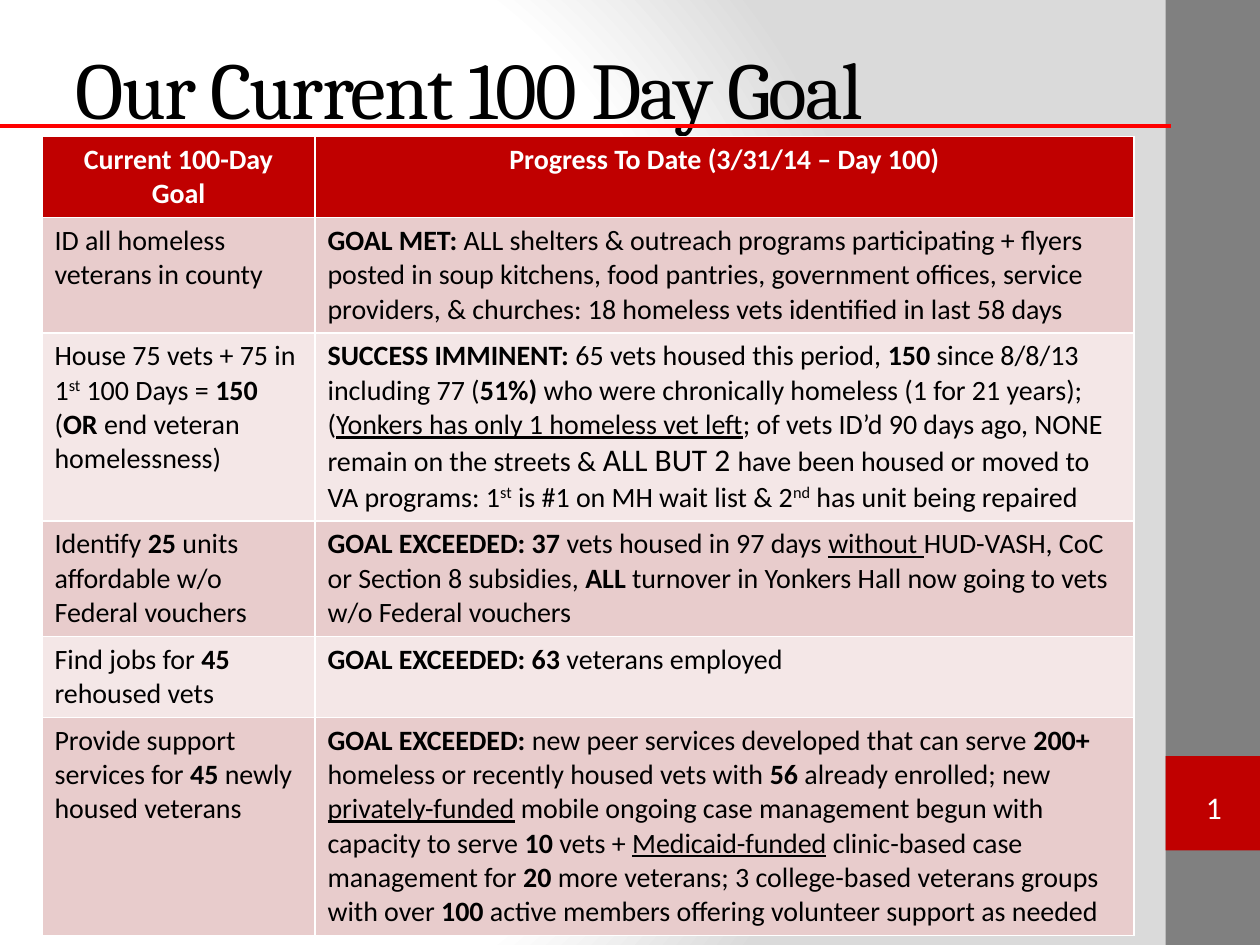
"""Build the 100 day goal slide: a title, a progress table and a side bar."""
import pptx
import pptx.dml.color
import pptx.enum.shapes
import pptx.enum.text
import pptx.oxml
import pptx.oxml.ns
import pptx.util

COLORS = {"red": "C00000", "line": "FF0000", "gray": "808080", "white": "FFFFFF",
          "black": "000000", "edge": "DADADA", "band": "E8CCCC", "pale": "F4E7E7"}

HEADER = ("Current 100-Day Goal", "Progress To Date (3/31/14 – Day 100)")

GOALS = [
    (3, "ID all homeless veterans in county",
     "*GOAL MET: *ALL shelters & outreach programs participating + flyers posted in soup "
     "kitchens, food pantries, government offices, service providers, & churches: "
     "18 homeless vets identified in last 58 days"),
    (5, "House 75 vets + 75 in 1^st^ 100 Days = *150*|(*OR* end veteran homelessness)",
     "*SUCCESS IMMINENT: *65 vets housed this period, *150 *since 8/8/13 including 77 "
     "(*51%) *who were chronically homeless (1 for 21 years); \n"
     "(_Yonkers has only 1 homeless vet left_; of vets ID’d 90 days ago, NONE remain on "
     "the streets & ~ALL BUT 2 ~have been housed or moved to VA programs: "
     "1^st^ is #1 on MH wait list & 2^nd^ has unit being repaired"),
    (3, "Identify *25* units affordable w/o Federal vouchers",
     "*GOAL EXCEEDED: 37 *vets housed in 97 days _without _HUD-VASH, CoC or Section 8 "
     "subsidies, *ALL* turnover in Yonkers Hall now going to vets w/o Federal vouchers"),
    (2, "Find jobs for *45* rehoused vets", "*GOAL EXCEEDED: 63* veterans employed"),
    (6, "Provide support services for *45* newly housed veterans",
     "*GOAL EXCEEDED: *new peer services developed that can serve *200+ *homeless or "
     "recently housed vets with *56* already enrolled; new _privately-funded_ mobile "
     "ongoing case management begun with capacity to serve* 10 *vets + _Medicaid-funded_ "
     "clinic-based case management for *20 *more veterans; 3 college-based veterans "
     "groups with over *100* active members offering volunteer support as needed"),
]


class Deck:
    """Holds the style and the current slide, on a grid of 120 columns by 90 rows."""

    marks = {"*": "bold", "_": "underline", "^": "super", "~": "large"}

    def __init__(self):
        """Open a slide with a title placeholder."""
        self.prs = pptx.Presentation()
        self.prs.slide_width = pptx.util.Inches(10)
        self.prs.slide_height = pptx.util.Inches(7.5)
        self.slide = self.prs.slides.add_slide(self.prs.slide_layouts[5])

    def box(self, *units):
        """Turn grid units into lengths."""
        return [round(self.prs.slide_width * u / 120) for u in units]

    def color(self, name):
        """Return a named colour."""
        return pptx.dml.color.RGBColor.from_string(COLORS[name])

    def style(self, font, size, color, name="Calibri"):
        """Set face, size and colour of a font."""
        font.name, font.size = name, pptx.util.Pt(size)
        font.color.rgb = self.color(color)

    def background(self, stops):
        """Paint a circular gradient behind the slide."""
        fill = self.slide.background.fill
        fill.solid()
        bg_pr = self.slide.element.find(".//" + pptx.oxml.ns.qn("p:bgPr"))
        gs = "".join(f'<a:gs pos="{pos * 1000}"><a:srgbClr val="{COLORS[c]}"/></a:gs>'
                     for pos, c in stops)
        bg_pr.replace(bg_pr[0], pptx.oxml.parse_xml(
            f'<a:gradFill {pptx.oxml.ns.nsdecls("a")} rotWithShape="1"><a:gsLst>{gs}</a:gsLst>'
            '<a:path path="circle"><a:fillToRect l="20000" t="50000" r="100000" b="50000"/>'
            '</a:path></a:gradFill>'))

    def title(self, text, *at):
        """Move and fill the title placeholder."""
        sp = self.slide.shapes.title
        sp.left, sp.top, sp.width, sp.height = self.box(*at)
        tf = sp.text_frame
        tf.vertical_anchor = pptx.enum.text.MSO_ANCHOR.MIDDLE
        p = tf.paragraphs[0]
        p.alignment = pptx.enum.text.PP_ALIGN.LEFT
        r = p.add_run()
        r.text = text
        self.style(r.font, 46, "black", "Cambria")
        r.font._element.set("spc", "-100")

    def shape(self, kind, *at, fill=None):
        """Add a plain preset shape without an outline."""
        sp = self.slide.shapes.add_shape(kind, *self.box(*at))
        sp.shadow.inherit = False
        sp.line.fill.background()
        if fill:
            sp.fill.solid()
            sp.fill.fore_color.rgb = self.color(fill)
        else:
            sp.fill.background()
        return sp

    def number(self, text, *at):
        """Add the slide number between unlined brackets."""
        sp = self.shape(pptx.enum.shapes.MSO_SHAPE.DOUBLE_BRACKET, *at)
        sp.adjustments[0] = 0.18
        tf = sp.text_frame
        tf.margin_left = tf.margin_right = tf.margin_top = tf.margin_bottom = 0
        tf.vertical_anchor = pptx.enum.text.MSO_ANCHOR.MIDDLE
        p = tf.paragraphs[0]
        p.alignment = pptx.enum.text.PP_ALIGN.CENTER
        r = p.add_run()
        r.text = text
        self.style(r.font, 18, "white")

    def rule(self, x1, y1, x2, y2):
        """Add the red line."""
        ln = self.slide.shapes.add_connector(
            pptx.enum.shapes.MSO_CONNECTOR.STRAIGHT, *self.box(x1, y1, x2, y2))
        ln.line.color.rgb = self.color("line")
        ln.line.width = pptx.util.Pt(2.25)
        ln.element.spPr.append(
            pptx.oxml.parse_xml(f'<a:effectLst {pptx.oxml.ns.nsdecls("a")}/>'))

    def run(self, p, text, color, on):
        """Add one run with the marks that are on."""
        for i, part in enumerate(text.split("\n")):
            if i:
                p.add_line_break()
            if part:
                r = p.add_run()
                r.text = part
                self.style(r.font, 18 if "large" in on else 16, color)
                r.font.bold = "bold" in on
                r.font.underline = "underline" in on
                if "super" in on:
                    r.font._element.set("baseline", "30000")

    def cell(self, cell, text, fill, color="black", align=None):
        """Fill a cell with marked text, one paragraph to each bar."""
        cell.fill.solid()
        cell.fill.fore_color.rgb = self.color(fill)
        tf = cell.text_frame
        for i, line in enumerate(text.split("|")):
            p = tf.add_paragraph() if i else tf.paragraphs[0]
            p.alignment = align
            on, part = set(), ""
            for ch in line:
                if ch in self.marks:
                    self.run(p, part, color, on)
                    on ^= {self.marks[ch]}
                    part = ""
                else:
                    part += ch
            self.run(p, part, color, on)

    def table(self, header, rows, x, y, widths):
        """Add the table, with row heights from the count of text lines."""
        heights = [3.25 * n + 1.2 for n in [2] + [row[0] for row in rows]]
        table = self.slide.shapes.add_table(
            len(heights), len(widths), *self.box(x, y, sum(widths), sum(heights))).table
        for col, width in zip(table.columns, self.box(*widths)):
            col.width = width
        for row, height in zip(table.rows, self.box(*heights)):
            row.height = height
        for j, text in enumerate(header):
            self.cell(table.cell(0, j), f"*{text}*", "red", "white",
                      pptx.enum.text.PP_ALIGN.CENTER)
        for i, (_, *texts) in enumerate(rows):
            for j, text in enumerate(texts):
                self.cell(table.cell(i + 1, j), text, "pale" if i % 2 else "band")


def main():
    """Compose and save the slide."""
    deck = Deck()
    rect = pptx.enum.shapes.MSO_SHAPE.RECTANGLE
    deck.background([(0, "white"), (75, "white"), (100, "edge")])
    deck.shape(rect, 111, 0, 9, 90, fill="gray")
    deck.shape(rect, 111, 72, 9, 9, fill="red")
    deck.title("Our Current 100 Day Goal", 6, 3.6, 100, 9.4)
    deck.table(HEADER, GOALS, 4, 13, (26, 78))
    deck.rule(0, 12, 111.5, 12)
    deck.number("1", 112, 74.2, 7.2, 5.2)
    deck.prs.save("out.pptx")


if __name__ == "__main__":
    main()
